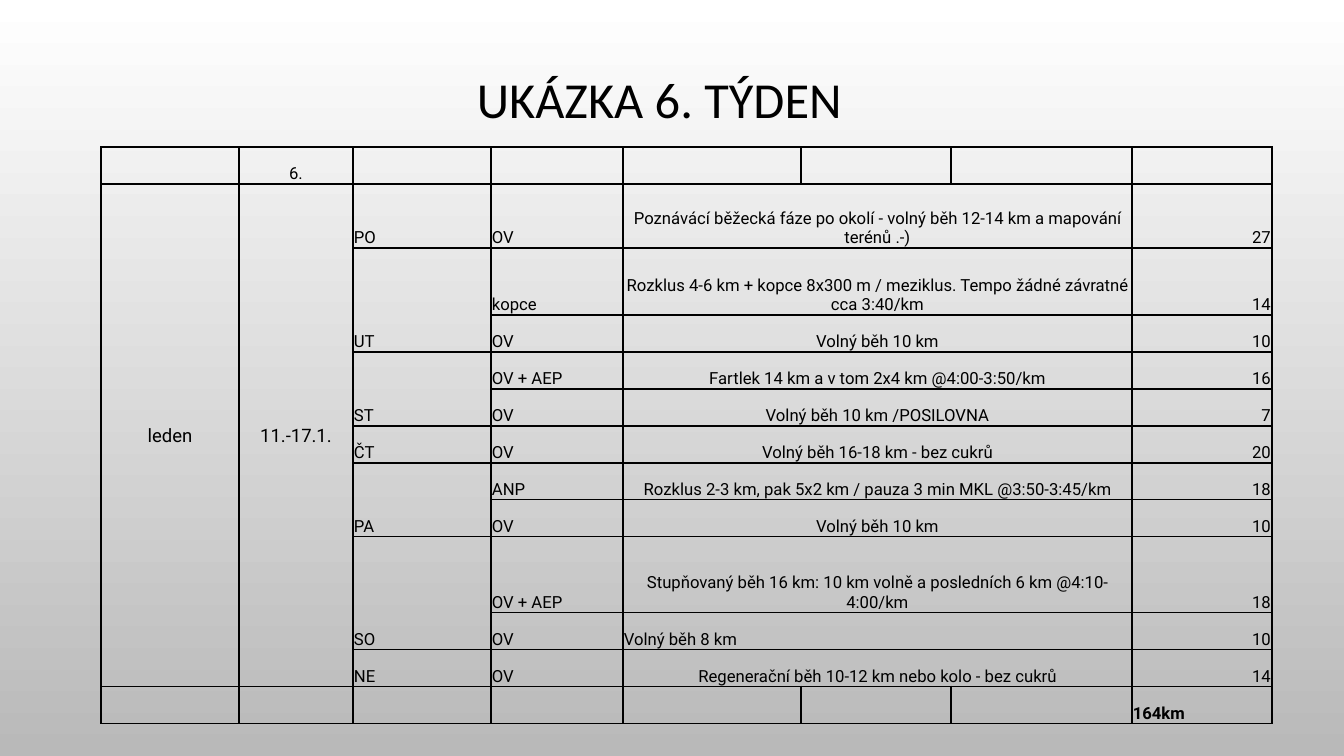
from lxml import etree
from pptx import Presentation
from pptx import util as u
from pptx.dml.color import RGBColor
from pptx.enum import text
from pptx.oxml.ns import qn

TITLE = "UKÁZKA 6. TÝDEN"
WEEK, MONTH, DATES, TOTAL = "6.", "leden", "11.-17.1.", "164km"
# day, [(type, training, km), ...]
DAYS = [
    ("PO", [("OV", "Poznávácí běžecká fáze po okolí - volný běh 12-14 km a mapování terénů .-)", 27)]),
    ("UT", [("kopce", "Rozklus 4-6 km + kopce 8x300 m / meziklus. Tempo žádné závratné cca 3:40/km", 14),
            ("OV", "Volný běh 10 km", 10)]),
    ("ST", [("OV + AEP", "Fartlek 14 km a v tom 2x4 km @4:00-3:50/km", 16),
            ("OV", "Volný běh 10 km /POSILOVNA", 7)]),
    ("ČT", [("OV", "Volný běh 16-18 km - bez cukrů", 20)]),
    ("PA", [("ANP", "Rozklus 2-3 km, pak 5x2 km / pauza 3 min MKL @3:50-3:45/km", 18),
            ("OV", "Volný běh 10 km", 10)]),
    ("SO", [("OV + AEP", "Stupňovaný běh 16 km: 10 km volně a posledních 6 km @4:10-4:00/km", 18),
            ("OV", "Volný běh 8 km", 10)]),
    ("NE", [("OV", "Regenerační běh 10-12 km nebo kolo - bez cukrů", 14)]),
]
LEFT_ALIGNED = "Volný běh 8 km"
COLS = [138, 114, 138, 132, 178, 150, 181, 140]
ROW = 37
TALL_ROWS = {1: 64, 2: 67, 9: 76}
LEFT, CENTER, RIGHT = text.PP_ALIGN.LEFT, text.PP_ALIGN.CENTER, text.PP_ALIGN.RIGHT
BOTTOM, MIDDLE = text.MSO_ANCHOR.BOTTOM, text.MSO_ANCHOR.MIDDLE


def px(n):
    return u.Emu(n * 6858)


def color(value):
    return RGBColor.from_string(value)


def style(font, name, size, bold=False):
    font.name, font.size, font.bold = name, u.Pt(size), bold
    font.color.rgb = color("000000")


def frame(cell):
    """Clear the fill, draw black 1 pt borders and keep an empty cell low."""
    cell.fill.background()
    cell.margin_left = cell.margin_right = cell.margin_top = px(1)
    cell.margin_bottom = 0
    cell.vertical_anchor = BOTTOM
    pr = cell._tc.get_or_add_tcPr()
    for i, side in enumerate(("a:lnL", "a:lnR", "a:lnT", "a:lnB")):
        ln = etree.Element(qn(side), w=str(u.Pt(1)))
        fill = etree.SubElement(ln, qn("a:solidFill"))
        etree.SubElement(fill, qn("a:srgbClr"), val="000000")
        pr.insert(i, ln)
    end = cell.text_frame.paragraphs[0]._p.get_or_add_endParaRPr()
    end.set("sz", "900")


def write(cell, value, align=LEFT, anchor=BOTTOM, size=9, bold=False):
    cell.vertical_anchor = anchor
    p = cell.text_frame.paragraphs[0]
    p.add_run().text = str(value)
    p.alignment = align
    style(p.font, "Roboto", size, bold)


prs = Presentation()
prs.slide_width, prs.slide_height = px(1344), px(756)
s = prs.slides.add_slide(prs.slide_layouts[5])

bg = s.background.fill
bg.gradient()
bg.gradient_angle = 270
for stop, position, shade in zip(bg.gradient_stops, (0, 1), ("FFFFFF", "B9B9B9")):
    stop.position, stop.color.rgb = position, color(shade)

title = s.shapes.title
title.left, title.top, title.width, title.height = px(101), px(68), px(1117), px(68)
tf = title.text_frame
tf.text = TITLE
tf.auto_size = text.MSO_AUTO_SIZE.NONE
tf.vertical_anchor = MIDDLE
p = tf.paragraphs[0]
p.alignment, p.line_spacing = CENTER, 0.9
style(p.font, "Calibri", 27.2)

sessions = sum(len(trainings) for _, trainings in DAYS)
heights = [TALL_ROWS.get(i, ROW) for i in range(sessions + 2)]
tbl = s.shapes.add_table(len(heights), len(COLS), px(101), px(147),
                         px(sum(COLS)), px(sum(heights))).table
tbl.first_row = tbl.horz_banding = False
for col, width in zip(tbl.columns, COLS):
    col.width = px(width)
for row, height in zip(tbl.rows, heights):
    row.height = px(height)
for cell in tbl.iter_cells():
    frame(cell)

write(tbl.cell(0, 1), WEEK, CENTER)
for c, label in enumerate((MONTH, DATES)):
    tbl.cell(1, c).merge(tbl.cell(sessions, c))
    write(tbl.cell(1, c), label, CENTER, MIDDLE, 10)

r = 1
for day, trainings in DAYS:
    if len(trainings) > 1:
        tbl.cell(r, 2).merge(tbl.cell(r + len(trainings) - 1, 2))
    write(tbl.cell(r, 2), day)
    for kind, training, km in trainings:
        write(tbl.cell(r, 3), kind)
        tbl.cell(r, 4).merge(tbl.cell(r, 6))
        write(tbl.cell(r, 4), training, LEFT if training == LEFT_ALIGNED else CENTER)
        write(tbl.cell(r, 7), km, RIGHT)
        r += 1
write(tbl.cell(r, 7), TOTAL, bold=True)

prs.save("out.pptx")
